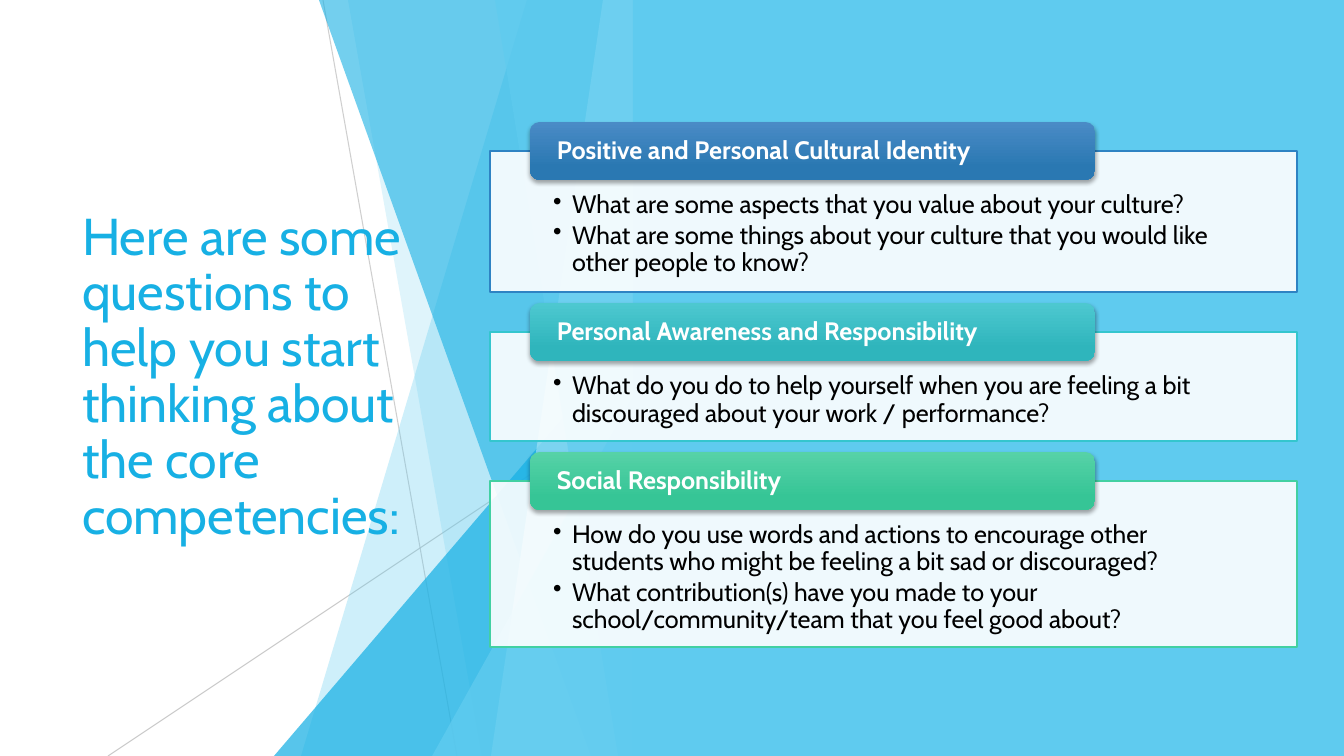
from lxml import etree
from pptx import Presentation, util as u
from pptx.dml.color import RGBColor
from pptx.enum import shapes, text
from pptx.oxml import ns

PX = 914400 / 100.8
WIDTH, HEIGHT = 1344, 756
FONT = "Cabin"
SKY = RGBColor(0x5F, 0xCB, 0xEF)
AZURE = RGBColor(0x17, 0xB0, 0xE4)
PALE = RGBColor(0x9F, 0xE0, 0xF5)
GREY = RGBColor(0xBF, 0xBF, 0xBF)
WHITE = RGBColor(0xFF, 0xFF, 0xFF)
BLACK = RGBColor(0, 0, 0)
BLUE, BLUE_TOP, BLUE_END = (RGBColor.from_string(c) for c in ("2E83C3", "4A8BC6", "2A78B2"))
TEAL, TEAL_TOP, TEAL_END = (RGBColor.from_string(c) for c in ("34C6CE", "4DC8D0", "2FB5BC"))
GREEN, GREEN_TOP, GREEN_END = (RGBColor.from_string(c) for c in ("42D0A2", "56D2A7", "36C596"))


def px(*lengths):
    return [round(length * PX) for length in lengths]


def add_xml(parent, tag, **attributes):
    return etree.SubElement(parent, ns.qn(tag), attributes)


presentation = Presentation()
presentation.slide_width, presentation.slide_height = px(WIDTH, HEIGHT)
slide = presentation.slides.add_slide(presentation.slide_layouts[5])

# Thin grey lines behind the facets
for x1, y1, x2, y2, opacity in [(323, 0, 457, HEIGHT, 75), (633, 406, 108, HEIGHT, 80)]:
    line = slide.shapes.add_connector(shapes.MSO_CONNECTOR.STRAIGHT, *px(x1, y1, x2, y2))
    line.line.color.rgb = GREY
    line.line.width = u.Pt(0.75)
    color = line.element.spPr.find(".//" + ns.qn("a:srgbClr"))
    add_xml(color, "a:alpha", val=str(opacity * 1000))
    add_xml(line.element.spPr, "a:effectLst")

# Facets end at the panel: top x and bottom x, or the top y of a triangle
PANEL_LEFT = 633
facets = [
    (527, 301, None, SKY, 30),
    (348, 482, None, SKY, 20),
    (None, 274, 336, AZURE, 72),
    (319, 591, None, AZURE, 60),
    (603, 491, None, PALE, 70),
    (495, 618, None, SKY, 65),
    (None, 432, 396, SKY, 80),
]
for top_x, bottom_x, top_y, fill_color, opacity in facets:
    if top_y is None:
        outline = slide.shapes.build_freeform(top_x, 0, scale=PX)
        outline.add_line_segments([(PANEL_LEFT, 0), (PANEL_LEFT, HEIGHT), (bottom_x, HEIGHT)])
        facet = outline.convert_to_shape()
    else:
        facet = slide.shapes.add_shape(
            shapes.MSO_SHAPE.ISOSCELES_TRIANGLE,
            *px(bottom_x, top_y, PANEL_LEFT - bottom_x, HEIGHT - top_y))
        facet.adjustments[0] = 1
    facet.shadow.inherit = False
    facet.line.fill.background()
    facet.fill.solid()
    facet.fill.fore_color.rgb = fill_color
    color = facet.element.spPr.find(".//" + ns.qn("a:srgbClr"))
    add_xml(color, "a:alpha", val=str(opacity * 1000))

# Title, in front of the facets
title = slide.shapes.title
slide.shapes.element.append(title.element)
title.left, title.top, title.width, title.height = px(72, 152, 391, 452)
title.text = "Here are some questions to help you start thinking about the core competencies:"
title.text_frame.word_wrap = True
title.text_frame.auto_size = text.MSO_AUTO_SIZE.NONE
title.text_frame.vertical_anchor = text.MSO_ANCHOR.MIDDLE
paragraph = title.text_frame.paragraphs[0]
paragraph.alignment = text.PP_ALIGN.LEFT
paragraph.line_spacing = 0.9
paragraph.font.name = FONT
paragraph.font.size = u.Pt(37)
paragraph.font.color.rgb = AZURE

# Blue panel on the right
panel = slide.shapes.add_shape(
    shapes.MSO_SHAPE.RECTANGLE, *px(PANEL_LEFT, 0, WIDTH - PANEL_LEFT, HEIGHT))
panel.shadow.inherit = False
panel.line.fill.background()
panel.fill.solid()
panel.fill.fore_color.rgb = SKY

# Competency cards, stacked with equal gaps
CARD_GAP, HEADER_RISE = 40, 29
competencies = [
    ("Positive and Personal Cultural Identity", 141, BLUE, BLUE_TOP, BLUE_END,
     ["What are some aspects that you value about your culture?",
      "What are some things about your culture that you would like other people to know?"]),
    ("Personal Awareness and Responsibility", 109, TEAL, TEAL_TOP, TEAL_END,
     ["What do you do to help yourself when you are feeling a bit discouraged "
      "about your work / performance?"]),
    ("Social Responsibility", 166, GREEN, GREEN_TOP, GREEN_END,
     ["How do you use words and actions to encourage other students who might be "
      "feeling a bit sad or discouraged?",
      "What contribution(s) have you made to your school/community/team that you "
      "feel good about?"]),
]
card_top = 151
for name, card_height, edge, gradient_top, gradient_end, questions in competencies:
    card = slide.shapes.add_shape(
        shapes.MSO_SHAPE.RECTANGLE, *px(490, card_top, 807, card_height))
    card.shadow.inherit = False
    card.fill.solid()
    card.fill.fore_color.rgb = WHITE
    color = card.element.spPr.find(".//" + ns.qn("a:srgbClr"))
    add_xml(color, "a:alpha", val="90000")
    card.line.color.rgb = edge
    card.line.width = u.Pt(1)

    frame = card.text_frame
    frame.word_wrap = True
    frame.vertical_anchor = text.MSO_ANCHOR.TOP
    frame.margin_left, frame.margin_top, frame.margin_right, frame.margin_bottom = px(
        63, 41, 63, 14)
    frame.text = "\n".join(questions)
    for paragraph in frame.paragraphs:
        paragraph.alignment = text.PP_ALIGN.LEFT
        paragraph.line_spacing = 0.9
        paragraph.space_after = u.Pt(2.5)
        paragraph.font.name = FONT
        paragraph.font.size = u.Pt(18)
        paragraph.font.color.rgb = BLACK
        properties = paragraph._p.get_or_add_pPr()
        [indent] = px(19)
        properties.set("marL", str(indent))
        properties.set("indent", str(-indent))
        bullet = etree.Element(ns.qn("a:buChar"), char="•")
        properties.find(ns.qn("a:defRPr")).addprevious(bullet)

    # Header tab over the card's top edge
    header = slide.shapes.add_shape(
        shapes.MSO_SHAPE.ROUNDED_RECTANGLE, *px(530, card_top - HEADER_RISE, 565, 58))
    header.line.fill.background()
    header.fill.gradient()
    header.fill.gradient_angle = 270
    first_stop, last_stop = header.fill.gradient_stops
    first_stop.color.rgb = gradient_top
    last_stop.color.rgb = gradient_end
    first_stop.position, last_stop.position = 0, 0.78
    header.shadow.inherit = False
    shadow = add_xml(
        header.element.spPr.find(ns.qn("a:effectLst")), "a:outerShdw",
        blurRad=str(u.Pt(3)), dist=str(u.Pt(2)), dir="5400000", rotWithShape="0")
    add_xml(add_xml(shadow, "a:srgbClr", val=str(BLACK)), "a:alpha", val="35000")

    frame = header.text_frame
    frame.word_wrap = True
    frame.vertical_anchor = text.MSO_ANCHOR.MIDDLE
    frame.margin_left, frame.margin_top, frame.margin_right, frame.margin_bottom = px(
        24, 0, 24, 0)
    frame.text = name
    paragraph = frame.paragraphs[0]
    paragraph.alignment = text.PP_ALIGN.LEFT
    paragraph.line_spacing = 0.9
    paragraph.font.name = FONT
    paragraph.font.size = u.Pt(18)
    paragraph.font.bold = True
    paragraph.font.color.rgb = WHITE
    card_top += card_height + CARD_GAP

presentation.save("out.pptx")
